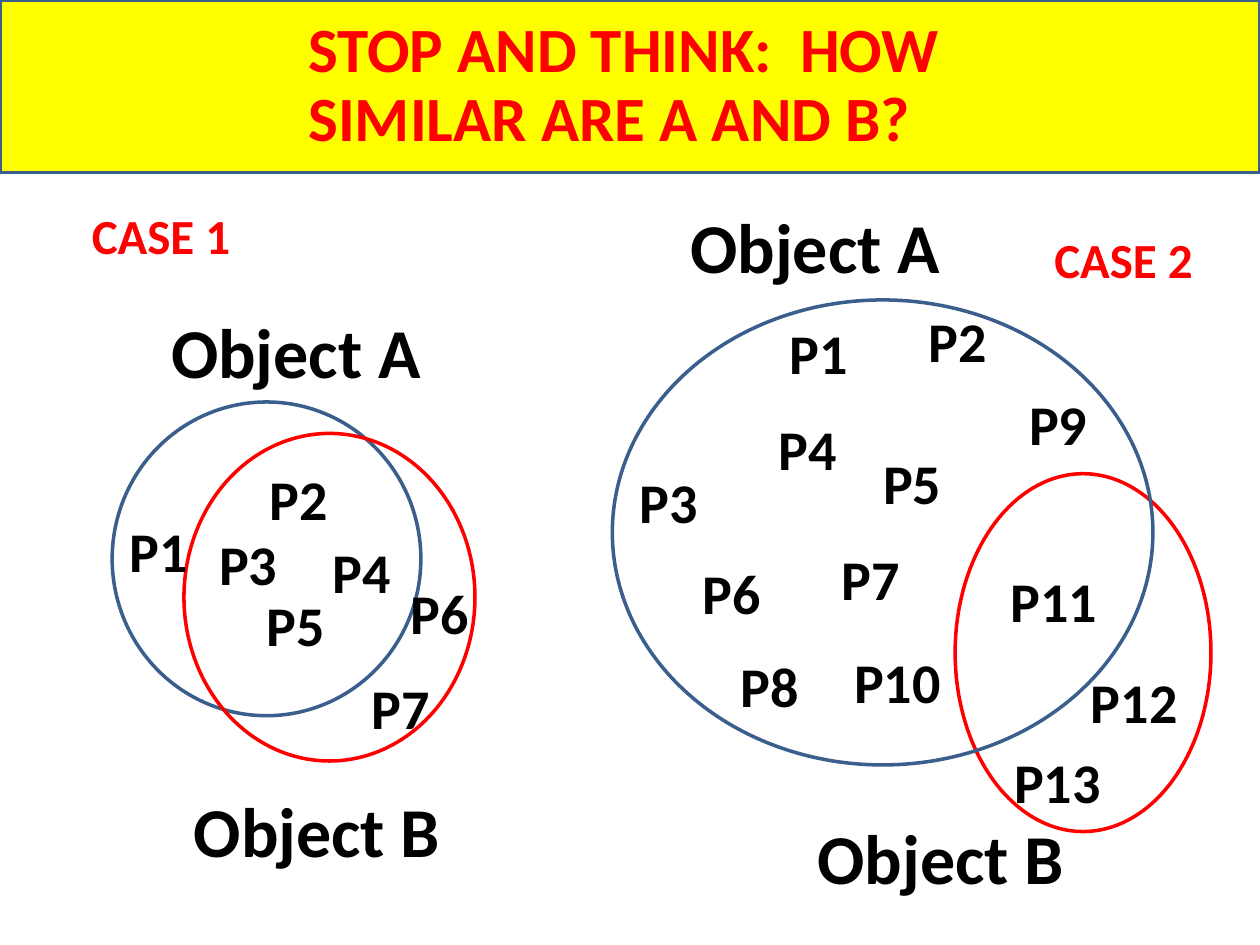
from pptx import Presentation
from pptx import util as u
from pptx.dml.color import RGBColor
from pptx.enum import shapes, text

THEME = {
    "font": "Calibri",
    "yellow": "FFFF00", "blue": "3A5F8C", "red": "FF0000", "black": "000000",
    "title": 36, "object": 40, "case": 28, "property": 32,
    "line": 2,
}
SLIDE_SIZE = (720, 540)
BANNER = (0, 0, 720, 98.6)
TITLE = ("STOP AND THINK:  HOW SIMILAR ARE A AND B?", (169.2, 5.8, 460.1, 87.8))
PROPERTY_SIZE = (66.2, 46.1)
CASE_SIZE = (108, 41)
OBJECT_SIZES = {"Object A": (208.8, 56.9), "Object B": (175.7, 55.4)}

CASES = [
    {
        "label": ("CASE 2", (595.4, 127.4)),
        "objects": {"Object A": (387.4, 113), "Object B": (460.1, 462.2)},
        "ellipses": [
            ("red", (545.8, 270.7, 146.2, 204.5)),
            ("blue", (349.9, 171.4, 308.9, 265.7)),
        ],
        "properties": {
            "P1": (444.2, 178.6), "P2": (523.4, 171.4), "P3": (358.6, 263.5),
            "P4": (437.8, 233.3), "P5": (497.5, 252.7), "P6": (394.6, 315.4),
            "P7": (473.8, 307.4), "P8": (416.2, 368.6), "P9": (581, 218.9),
            "P10": (481, 366.5), "P11": (570.2, 320.4), "P12": (616.3, 378),
            "P13": (572.4, 423.4),
        },
    },
    {
        "label": ("CASE 1", (45.4, 113.8)),
        "objects": {"Object A": (90.7, 172.8), "Object B": (103.7, 446.4)},
        "ellipses": [
            ("blue", (64.1, 229.7, 176.4, 179.3)),
            ("red", (105.1, 247.7, 166.3, 187.2)),
        ],
        "properties": {
            "P1": (67, 291.6), "P2": (146.9, 262.1), "P3": (118.1, 298.8),
            "P4": (182.9, 303.8), "P5": (145.4, 334.1), "P6": (227.5, 326.9),
            "P7": (205.2, 381.6),
        },
    },
]


def color(name):
    return RGBColor.from_string(THEME[name])


def points(box):
    return [u.Pt(length) for length in box]


def add_outline(parent, kind, box, line, fill=None):
    shape = parent.add_shape(kind, *points(box))
    shape.shadow.inherit = False
    if fill:
        shape.fill.solid()
        shape.fill.fore_color.rgb = color(fill)
    else:
        shape.fill.background()
    shape.line.color.rgb = color(line)
    shape.line.width = u.Pt(THEME["line"])


def add_text(parent, words, box, size, ink="black", spacing=None):
    frame = parent.add_textbox(*points(box)).text_frame
    frame.word_wrap = True
    frame.auto_size = text.MSO_AUTO_SIZE.SHAPE_TO_FIT_TEXT
    paragraph = frame.paragraphs[0]
    if spacing:
        paragraph.line_spacing = spacing
    run = paragraph.add_run()
    run.text = words
    run.font.name = THEME["font"]
    run.font.size = u.Pt(THEME[size])
    run.font.bold = True
    run.font.color.rgb = color(ink)


def add_case(slide, case):
    diagram = slide.shapes.add_group_shape().shapes
    for line, box in case["ellipses"]:
        add_outline(diagram, shapes.MSO_SHAPE.OVAL, box, line)
    for words, place in case["properties"].items():
        add_text(diagram, words, place + PROPERTY_SIZE, "property")
    for words, place in case["objects"].items():
        add_text(slide.shapes, words, place + OBJECT_SIZES[words], "object")
    words, place = case["label"]
    add_text(slide.shapes, words, place + CASE_SIZE, "case", ink="red")


def main():
    presentation = Presentation()
    presentation.slide_width, presentation.slide_height = points(SLIDE_SIZE)
    slide = presentation.slides.add_slide(presentation.slide_layouts[6])
    add_outline(slide.shapes, shapes.MSO_SHAPE.RECTANGLE, BANNER, "blue", fill="yellow")
    for case in CASES:
        add_case(slide, case)
    add_text(slide.shapes, *TITLE, "title", ink="red", spacing=0.92)
    presentation.save("out.pptx")


if __name__ == "__main__":
    main()
